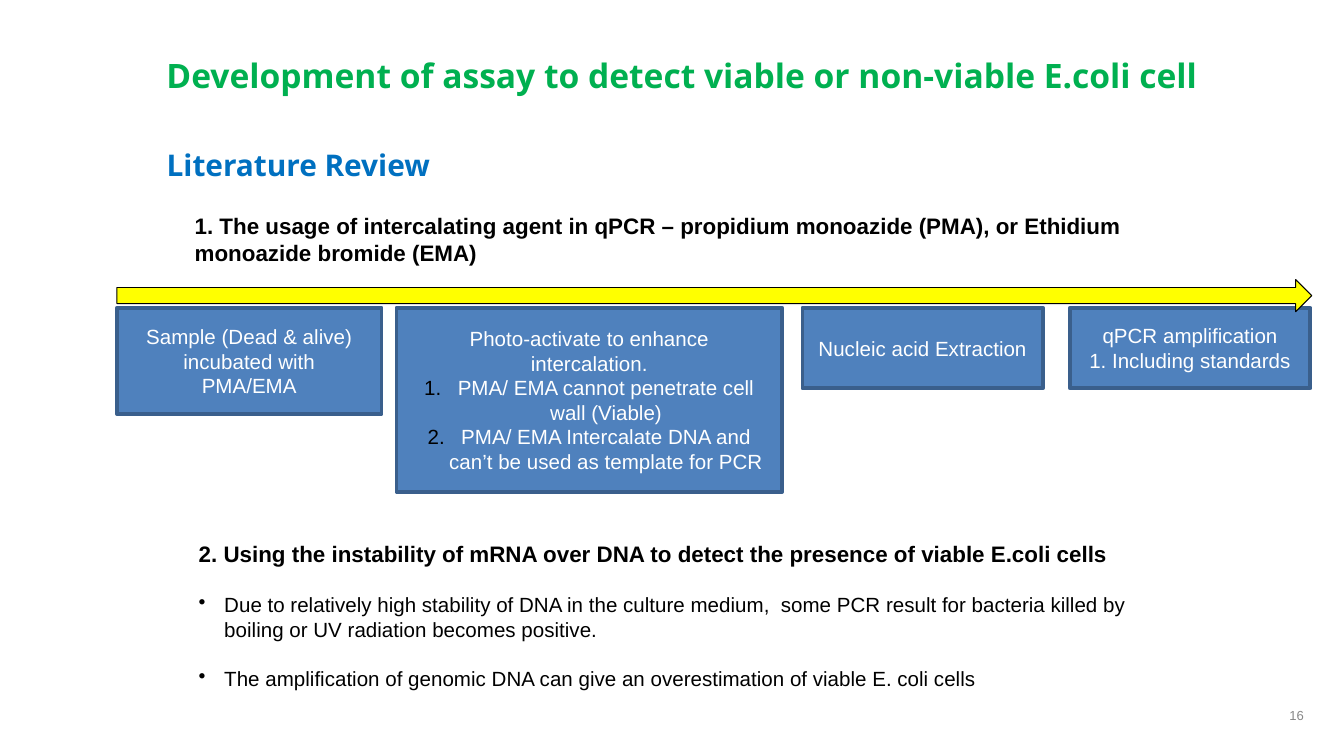
from pptx import Presentation
from pptx.dml.color import RGBColor
from pptx.enum.shapes import MSO_SHAPE
from pptx.enum.text import MSO_ANCHOR, MSO_AUTO_SIZE, PP_ALIGN
from pptx.oxml.ns import qn
from pptx.util import Inches, Pt
from lxml.etree import SubElement

BLACK = RGBColor(0x00, 0x00, 0x00)
WHITE = RGBColor(0xFF, 0xFF, 0xFF)
GRAY = RGBColor(0x88, 0x88, 0x88)
GREEN = RGBColor(0x00, 0xB0, 0x50)
BLUE = RGBColor(0x00, 0x70, 0xC0)
BOX_FILL = RGBColor(0x4F, 0x81, 0xBD)
BOX_LINE = RGBColor(0x3A, 0x5F, 0x8C)
YELLOW = RGBColor(0xFF, 0xFF, 0x00)

HEADING = "Development of assay to detect viable or non-viable E.coli cell"
SUBTITLE = "Literature Review"
METHOD_1 = ("1. The usage of intercalating agent in qPCR – propidium monoazide (PMA), "
            "or Ethidium monoazide bromide (EMA)")
METHOD_2 = "2. Using the instability of mRNA over DNA to detect the presence of viable E.coli cells"
FINDINGS = [
    "Due to relatively high stability of DNA in the culture medium,  some PCR result "
    "for bacteria killed by boiling or UV radiation becomes positive.",
    "The amplification of genomic DNA can give an overestimation of viable E. coli cells",
]
PAGE_NUMBER = "16"
STEPS = [
    (0.87, 1.97, 0.79, ["Sample (Dead & alive)\vincubated with\vPMA/EMA"], []),
    (2.95, 2.87, 1.37, ["Photo-activate to enhance intercalation."],
     ["PMA/ EMA cannot penetrate cell wall (Viable)",
      "PMA/ EMA Intercalate DNA and can’t be used as template for PCR"]),
    (5.97, 1.79, 0.6, ["Nucleic acid Extraction"], []),
    (7.96, 1.79, 0.6, ["qPCR amplification", "1. Including standards"], []),
]
STEP_TOP = 2.29


def add_text(tf, text, size, color, bold=False, font="Arial", align=PP_ALIGN.LEFT):
    p = tf.paragraphs[0] if not tf.text else tf.add_paragraph()
    p.alignment = align
    for i, line in enumerate(text.split("\v")):
        if i:
            p.add_line_break()
        r = p.add_run()
        r.text = line
        r.font.name = font
        r.font.size = Pt(size)
        r.font.bold = bold
        r.font.color.rgb = color
    return p


def add_bullet(p, indent, tag, **attributes):
    pPr = p._p.get_or_add_pPr()
    pPr.set("marL", str(Inches(indent)))
    pPr.set("indent", str(Inches(-indent)))
    SubElement(SubElement(pPr, qn("a:buClr")), qn("a:srgbClr"), val=str(BLACK))
    SubElement(pPr, qn(tag), **attributes)


def add_box(s, left, top, width, height):
    tf = s.shapes.add_textbox(*map(Inches, (left, top, width, height))).text_frame
    tf.word_wrap = True
    return tf


def add_block(s, kind, bounds, fill, line, line_width):
    sp = s.shapes.add_shape(kind, *map(Inches, bounds))
    sp.shadow.inherit = False
    sp.fill.solid()
    sp.fill.fore_color.rgb = fill
    sp.line.color.rgb = line
    sp.line.width = Pt(line_width)
    return sp


prs = Presentation()
prs.slide_width = Inches(10)
prs.slide_height = prs.slide_width * 9 // 16
s = prs.slides.add_slide(prs.slide_layouts[5])

title = s.shapes.title
title.left, title.top, title.width, title.height = map(Inches, (1.14, 1.04, 8.66, 0.48))
title.text_frame.vertical_anchor = MSO_ANCHOR.TOP
title.text_frame.auto_size = MSO_AUTO_SIZE.NONE
add_text(title.text_frame, SUBTITLE, 16, BLUE, True, "Open Sans")

add_text(add_box(s, 1.14, 0.36, 8.03, 0.79), HEADING, 18, GREEN, True, "Open Sans")
add_text(add_box(s, 1.35, 1.53, 7.69, 0.51), METHOD_1, 12, BLACK, True)

tf = add_box(s, 1.38, 3.97, 7.32, 1.23)
add_text(tf, METHOD_2, 12, BLACK, True)
for finding in FINDINGS:
    p = add_text(tf, finding, 11, BLACK)
    p.space_before = Pt(13.4)
    add_bullet(p, 0.19, "a:buChar", char="•")

for left, width, height, lines, numbered in STEPS:
    sp = add_block(s, MSO_SHAPE.RECTANGLE, (left, STEP_TOP, width, height), BOX_FILL, BOX_LINE, 2)
    tf = sp.text_frame
    tf.word_wrap = True
    tf.vertical_anchor = MSO_ANCHOR.MIDDLE
    for line in lines:
        add_text(tf, line, 11, WHITE, align=PP_ALIGN.CENTER)
    for line in numbered:
        p = add_text(tf, line, 11, WHITE, align=PP_ALIGN.CENTER)
        add_bullet(p, 0.25, "a:buAutoNum", type="arabicPeriod")

add_block(s, MSO_SHAPE.RIGHT_ARROW, (0.87, 2.08, 8.89, 0.24), YELLOW, BLACK, 0.5)

tf = add_box(s, 7.47, 5.17, 2.33, 0.3)
tf.vertical_anchor = MSO_ANCHOR.MIDDLE
add_text(tf, PAGE_NUMBER, 7, GRAY, align=PP_ALIGN.RIGHT)

prs.save("out.pptx")
